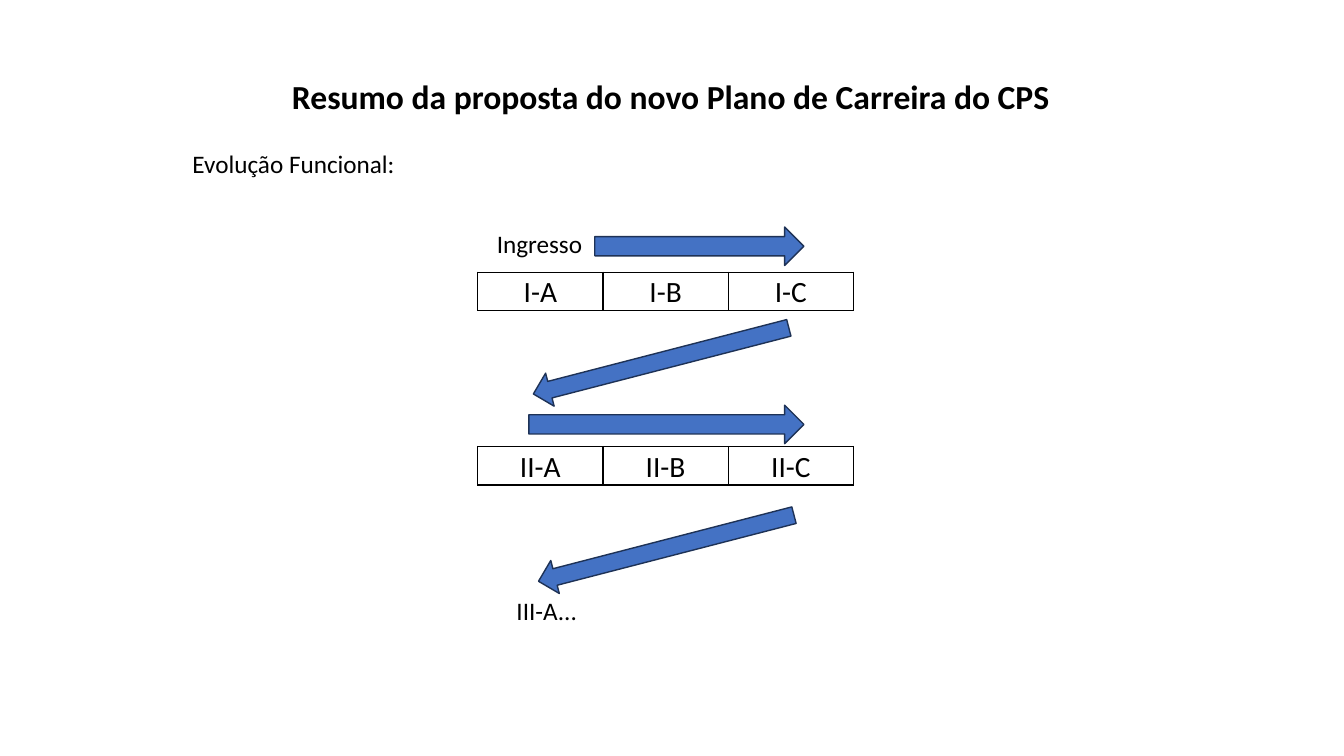
from dataclasses import dataclass

from lxml import etree
from pptx import Presentation
from pptx.dml.color import RGBColor
from pptx.enum.shapes import MSO_SHAPE
from pptx.enum.text import MSO_ANCHOR, PP_ALIGN
from pptx.oxml.ns import qn
from pptx.util import Cm, Pt

LEFT, MID = PP_ALIGN.LEFT, PP_ALIGN.CENTER
TOP, BASE = MSO_ANCHOR.TOP, MSO_ANCHOR.BOTTOM
RIGHT, DOWN = MSO_SHAPE.RIGHT_ARROW, MSO_SHAPE.DOWN_ARROW


@dataclass(frozen=True)
class Theme:
    font: str = "Calibri"
    ink: str = "000000"
    fill: str = "4472C4"
    edge: str = "1E3256"
    title: int = 24
    grade: int = 21
    body: int = 18


THEME = Theme()


def color(code):
    return RGBColor.from_string(code)


def write(frame, text, size=THEME.body, bold=False, align=LEFT):
    frame.word_wrap = True
    para = frame.paragraphs[0]
    para.alignment = align
    run = para.add_run()
    run.text = text
    font = run.font
    font.name, font.size, font.bold = THEME.font, Pt(size), bold
    font.color.rgb = color(THEME.ink)


def label(slide, box, text, **style):
    area = slide.shapes.add_textbox(*map(Cm, box))
    write(area.text_frame, text, **style)


def arrow(slide, kind, box, turn=0):
    shape = slide.shapes.add_shape(kind, *map(Cm, box))
    shape.rotation = turn
    shape.shadow.inherit = False
    shape.fill.solid()
    shape.fill.fore_color.rgb = color(THEME.fill)
    shape.line.color.rgb = color(THEME.edge)
    shape.line.width = Pt(1)


def border(cell):
    props = cell._tc.get_or_add_tcPr()
    for side in ("a:lnL", "a:lnR", "a:lnT", "a:lnB"):
        line = etree.SubElement(props, qn(side), w=str(Pt(1)))
        fill = etree.SubElement(line, qn("a:solidFill"))
        etree.SubElement(fill, qn("a:srgbClr"), val=THEME.ink)


def grades(slide, box, level):
    """Draw the one-row table with steps A to C of a level."""
    steps = "ABC"
    table = slide.shapes.add_table(1, len(steps), *map(Cm, box)).table
    table.first_row = table.horz_banding = False
    for col, step in enumerate(steps):
        cell = table.cell(0, col)
        border(cell)
        cell.fill.background()
        cell.vertical_anchor = BASE
        cell.margin_left = cell.margin_right = cell.margin_top = Cm(0.03)
        cell.margin_bottom = 0
        write(cell.text_frame, f"{level}-{step}", size=THEME.grade, align=MID)


def stage(slide, box, level, start, rise, drop, shift):
    """Draw a level: arrow across above its table, arrow back down below it."""
    x, y, w, h = box
    grades(slide, box, level)
    arrow(slide, RIGHT, (x + start, y - rise, 8.22 - start, h))
    arrow(slide, DOWN, (x + shift, y - drop, 0.86, 6.65), turn=75.5)


def header(slide, box):
    x, y, w, h = box
    title = slide.shapes.title
    title.left, title.top, title.width, title.height = map(Cm, (x, y, w, 1.28))
    frame = title.text_frame
    frame.vertical_anchor = TOP
    write(frame, "Resumo da proposta do novo Plano de Carreira do CPS",
          size=THEME.title, bold=True, align=MID)
    label(slide, (x, y + h - 1.75, w, 1.03), "Evolução Funcional:")


def career(slide, box):
    x, y, w, h = box
    tag = x + 0.23
    row = (w, 0.97)
    stage(slide, (x, y + 1.22, *row), "I",
          start=2.95, rise=1.14, drop=1.09, shift=4.19)
    stage(slide, (x, y + 5.61, *row), "II",
          start=1.29, rise=1.04, drop=0.76, shift=4.32)
    label(slide, (tag, y, 3.02, 1.02), "Ingresso")
    label(slide, (tag, y + h - 1.02, 3.02, 1.02), "III-A...", align=MID)


def main():
    deck = Presentation()
    deck.slide_width, deck.slide_height = Cm(33.87), Cm(19.05)
    slide = deck.slides.add_slide(deck.slide_layouts[5])
    header(slide, (4.6, 1.78, 24.61, 3.58))
    career(slide, (12.04, 5.64, 9.47, 10.26))
    deck.save("out.pptx")


if __name__ == "__main__":
    main()
